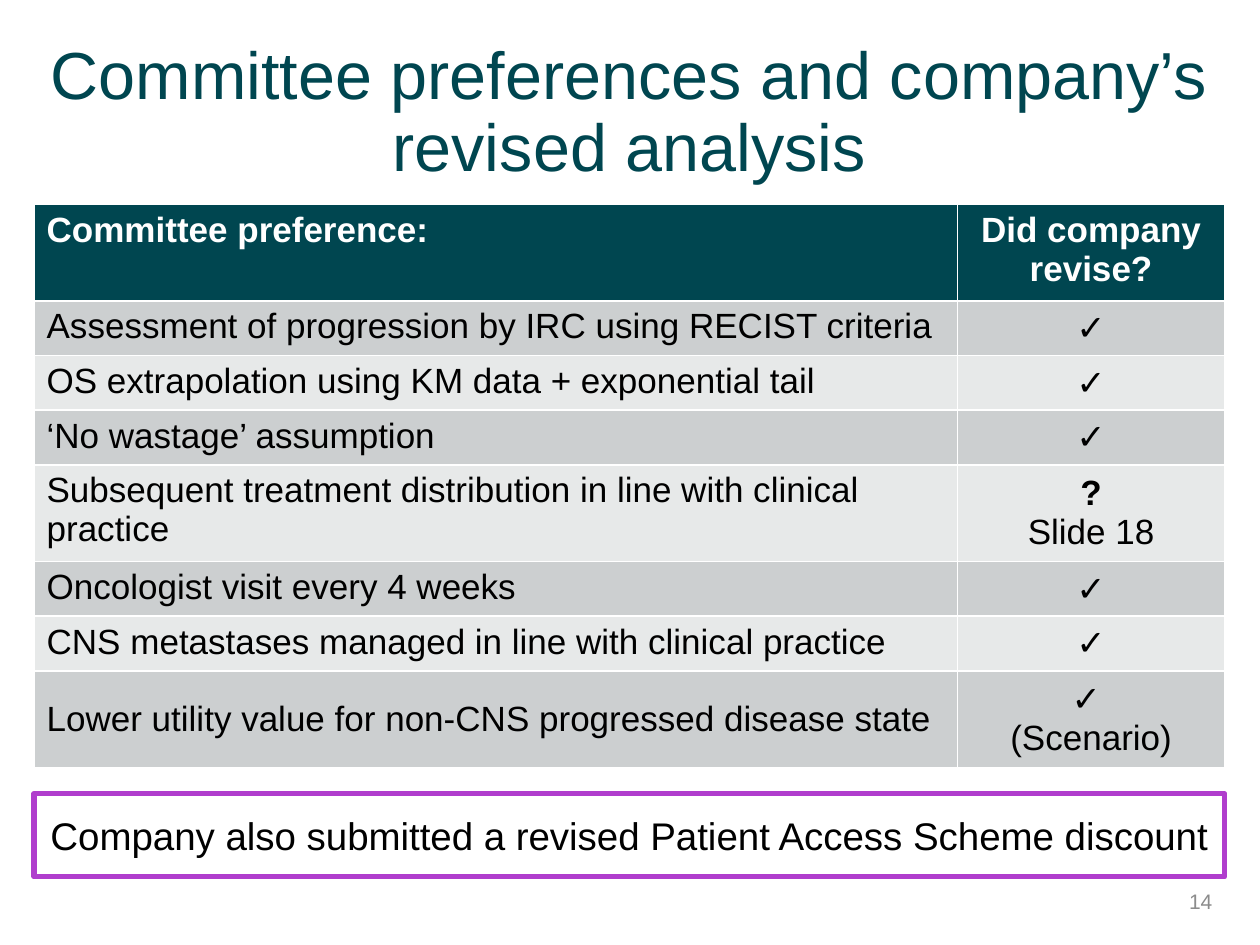
"""Build the slide on committee preferences and the company's revised analysis."""
from dataclasses import dataclass

from pptx import Presentation
from pptx.dml.color import RGBColor
from pptx.enum.shapes import MSO_SHAPE
from pptx.enum.text import MSO_ANCHOR, PP_ALIGN
from pptx.util import Emu, Pt

LEFT, CENTER, RIGHT = PP_ALIGN.LEFT, PP_ALIGN.CENTER, PP_ALIGN.RIGHT
TOP, MIDDLE = MSO_ANCHOR.TOP, MSO_ANCHOR.MIDDLE
RECTANGLE = MSO_SHAPE.RECTANGLE

PX = 9144
FONT = "Arial"
COLORS = {
    "teal": "004650",
    "white": "FFFFFF",
    "black": "000000",
    "gray": "8C8C8C",
    "band_dark": "CCCFD0",
    "band_light": "E7E9E9",
    "purple": "B03DCD",
}
MARGIN, WIDTH = 27, 945
COLUMN_WIDTHS = (733, 212)
ROW_HEIGHT = 41
TICK = "✓"


@dataclass(frozen=True)
class Style:
    """Text look of a paragraph."""

    size: int
    color: str = "black"
    bold: bool = False
    align: PP_ALIGN = CENTER


@dataclass(frozen=True)
class Preference:
    """Committee preference with the company's response."""

    text: str
    mark: str = TICK
    note: str = ""
    anchor: MSO_ANCHOR = TOP


HEADERS = ("Committee preference:", "Did company revise?")
PREFERENCES = (
    Preference("Assessment of progression by IRC using RECIST criteria"),
    Preference("OS extrapolation using KM data + exponential tail"),
    Preference("‘No wastage’ assumption"),
    Preference("Subsequent treatment distribution in line with clinical practice",
               "?", "Slide 18"),
    Preference("Oncologist visit every 4 weeks"),
    Preference("CNS metastases managed in line with clinical practice"),
    Preference("Lower utility value for non-CNS progressed disease state",
               TICK + " ", "(Scenario)", MIDDLE),
)


def px(n: int) -> Emu:
    """Convert px to EMU."""
    return Emu(n * PX)


def rgb(name: str) -> RGBColor:
    """Look up a named color."""
    return RGBColor.from_string(COLORS[name])


def style_paragraph(p, text: str, style: Style) -> None:
    """Write text into a paragraph and style it."""
    p.text = text
    p.alignment = style.align
    p.font.name = FONT
    p.font.size = Pt(style.size)
    p.font.bold = style.bold
    p.font.color.rgb = rgb(style.color)


def fill_frame(sp, text: str, style: Style):
    """Write one wrapped, vertically centered paragraph into a shape."""
    tf = sp.text_frame
    tf.word_wrap = True
    tf.vertical_anchor = MIDDLE
    p = tf.paragraphs[0]
    style_paragraph(p, text, style)
    return p


def add_text(s, x: int, y: int, w: int, h: int, text: str, style: Style):
    """Add a text box and return its paragraph."""
    return fill_frame(s.shapes.add_textbox(px(x), px(y), px(w), px(h)), text, style)


def fill_cell(cell, fill: str, anchor: MSO_ANCHOR, *lines: tuple[str, Style]) -> None:
    """Fill a cell with a color and styled paragraphs."""
    cell.fill.solid()
    cell.fill.fore_color.rgb = rgb(fill)
    cell.vertical_anchor = anchor
    tf = cell.text_frame
    for i, (text, style) in enumerate(lines):
        style_paragraph(tf.add_paragraph() if i else tf.paragraphs[0], text, style)


def add_preferences(s) -> None:
    """Add the table of committee preferences."""
    rows = len(PREFERENCES) + 1
    table = s.shapes.add_table(rows, len(HEADERS), px(MARGIN), px(162),
                               px(WIDTH), px(ROW_HEIGHT * rows)).table
    for column, width in zip(table.columns, COLUMN_WIDTHS):
        column.width = px(width)
    for col, (text, align) in enumerate(zip(HEADERS, (LEFT, CENTER))):
        fill_cell(table.cell(0, col), "teal", TOP,
                  (text, Style(20, "white", True, align)))
    for row, pref in enumerate(PREFERENCES, 1):
        band = "band_dark" if row % 2 else "band_light"
        response = [(pref.mark, Style(20, bold=True))]
        if pref.note:
            response.append((pref.note, Style(20)))
        fill_cell(table.cell(row, 0), band, pref.anchor,
                  (pref.text, Style(20, align=LEFT)))
        fill_cell(table.cell(row, 1), band, MIDDLE, *response)


def add_callout(s, text: str) -> None:
    """Add the outlined statement below the table."""
    sp = s.shapes.add_shape(RECTANGLE, px(MARGIN), px(630), px(WIDTH), px(66))
    sp.shadow.inherit = False
    sp.fill.background()
    sp.line.color.rgb = rgb("purple")
    sp.line.width = Pt(3)
    fill_frame(sp, text, Style(22))


def main() -> None:
    """Build and save the slide."""
    prs = Presentation()
    prs.slide_width, prs.slide_height = px(1000), px(750)
    s = prs.slides.add_slide(prs.slide_layouts[6])
    title = add_text(s, MARGIN, 39, WIDTH, 103,
                     "Committee preferences and company’s revised analysis",
                     Style(38, "teal"))
    title.line_spacing = 0.9
    add_preferences(s)
    add_text(s, 747, 695, 225, 40, "14", Style(12, "gray", align=RIGHT))
    add_callout(s, "Company also submitted a revised Patient Access Scheme discount")
    prs.save("out.pptx")


if __name__ == "__main__":
    main()
